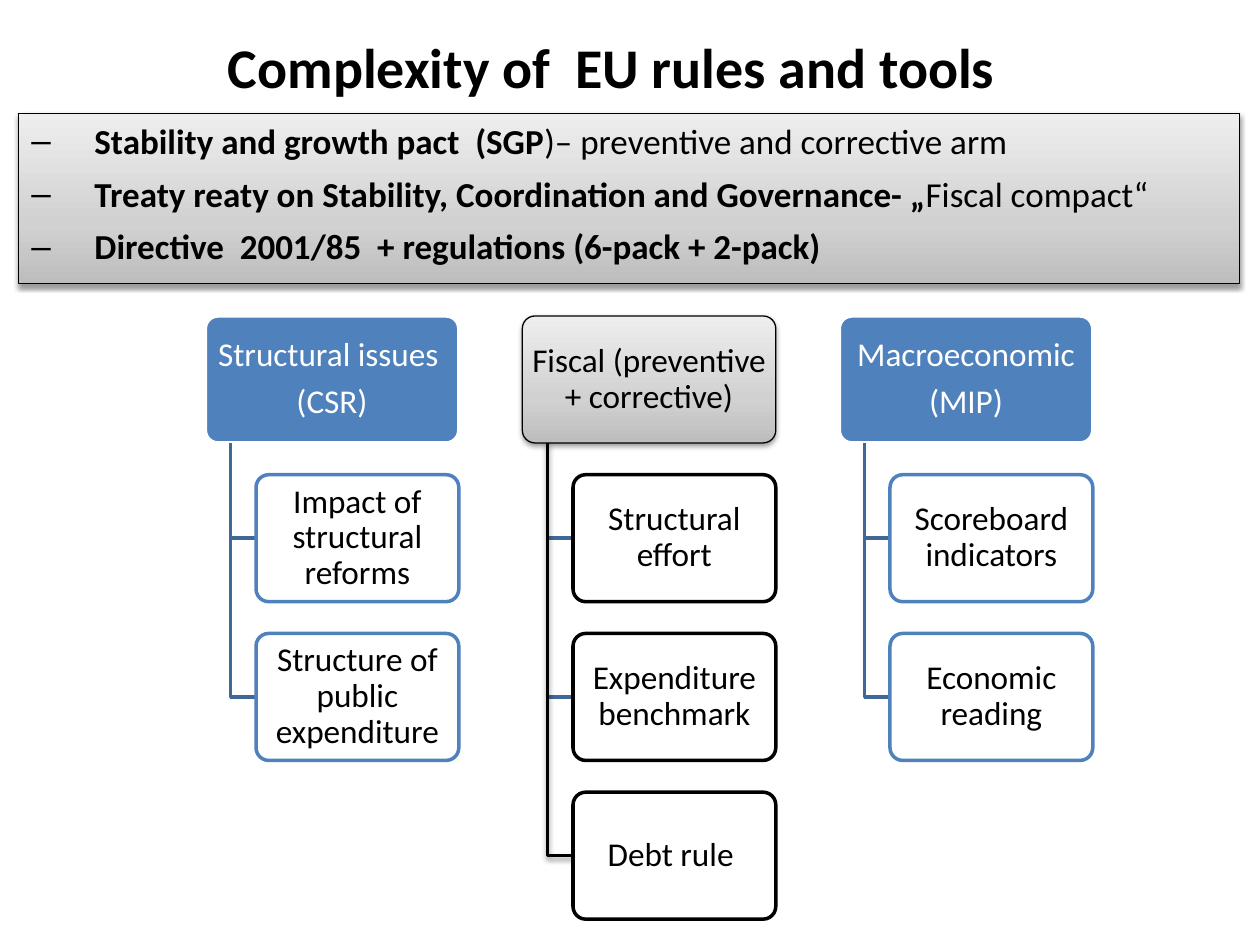
import copy

import pptx
import pptx.dml.color
import pptx.enum.shapes
import pptx.enum.text
import pptx.oxml
import pptx.oxml.ns
import pptx.util

Cm = pptx.util.Cm
Pt = pptx.util.Pt
BLUE, STEEL, BLACK, WHITE = "4F81BD", "3F6797", "000000", "FFFFFF"
GREY = ((0, "BDBDBD"), (0.35, "D1D1D1"), (1, "EEEEEE"))
RULES = (
    ("Stability and growth pact  (SGP", ")– preventive and corrective arm"),
    ("Treaty reaty on Stability, Coordination and Governance- „", "Fiscal compact“"),
    ("Directive  2001/85  + regulations (6-pack + 2-pack)", ""),
)
TREES = (
    (("Structural issues ", "(CSR)"), False,
     (("Impact of structural reforms", STEEL), ("Structure of public expenditure", STEEL))),
    (("Fiscal (preventive + corrective)",), True,
     (("Structural effort", STEEL), ("Expenditure benchmark", STEEL), ("Debt rule ", BLACK))),
    (("Macroeconomic", "(MIP)"), False,
     (("Scoreboard indicators", STEEL), ("Economic reading", STEEL))),
)


def tint(code):
    """Return the colour for a hex string."""
    return pptx.dml.color.RGBColor.from_string(code)


def place(shape, left, top, width, height):
    """Move and size a shape."""
    shape.left, shape.top, shape.width, shape.height = left, top, width, height


def set_line(shape, code, width):
    """Set the colour and width of an outline."""
    shape.line.color.rgb = tint(code)
    shape.line.width = Pt(width)


def set_font(font, size, code, bold=False):
    """Set the font of a paragraph."""
    font.name, font.size, font.bold = "Calibri", Pt(size), bold
    font.color.rgb = tint(code)


def add_shade(shape):
    """Give a shape a soft shadow below it."""
    shape.shadow.inherit = False
    shade = pptx.oxml.parse_xml(
        f'<a:outerShdw {pptx.oxml.ns.nsdecls("a")} blurRad="40000" dist="20000" '
        'dir="5400000" rotWithShape="0"><a:srgbClr val="000000">'
        '<a:alpha val="38000"/></a:srgbClr></a:outerShdw>')
    shape._element.spPr.find(pptx.oxml.ns.qn("a:effectLst")).append(shade)


def paint_grey(shape):
    """Give a shape the grey blend, black outline and shadow."""
    shape.fill.gradient()
    shape.fill.gradient_angle = 90
    stops = shape._element.spPr.find(".//" + pptx.oxml.ns.qn("a:gsLst"))
    stops.append(copy.deepcopy(stops[0]))
    for stop, (place_at, code) in zip(shape.fill.gradient_stops, GREY):
        stop.position = place_at
        stop.color.rgb = tint(code)
    set_line(shape, BLACK, 0.75)
    add_shade(shape)


def add_title(slide, left, top, width, height):
    """Fill the title."""
    title = slide.shapes.title
    place(title, left, top, width, height)
    frame = title.text_frame
    frame.text = "Complexity of  EU rules and tools  "
    frame.auto_size = pptx.enum.text.MSO_AUTO_SIZE.NONE
    frame.vertical_anchor = pptx.enum.text.MSO_ANCHOR.MIDDLE
    para = frame.paragraphs[0]
    para.alignment = pptx.enum.text.PP_ALIGN.CENTER
    set_font(para.font, 32, BLACK, True)


def add_rules(slide, left, top, width, height):
    """Fill the grey list of rules."""
    body = slide.placeholders[1]
    place(body, left, top, width, height)
    paint_grey(body)
    frame = body.text_frame
    frame.auto_size = pptx.enum.text.MSO_AUTO_SIZE.NONE
    for index, (strong, plain) in enumerate(RULES):
        para = frame.add_paragraph() if index else frame.paragraphs[0]
        para.level = 1
        para.space_before = Pt(6)
        props = para._p.get_or_add_pPr()
        props.set("marL", str(Cm(1.27)))
        props.set("indent", str(-Cm(1.27)))
        set_font(para.font, 20, BLACK)
        for text, bold in ((strong, True), (plain, False)):
            if text:
                run = para.add_run()
                run.text = text
                run.font.bold = bold


def add_box(slide, lines, code, left, top, width, height):
    """Add a rounded box with centred text."""
    box = slide.shapes.add_shape(
        pptx.enum.shapes.MSO_SHAPE.ROUNDED_RECTANGLE, left, top, width, height)
    box.adjustments[0] = 0.1
    box.shadow.inherit = False
    frame = box.text_frame
    frame.word_wrap = True
    frame.vertical_anchor = pptx.enum.text.MSO_ANCHOR.MIDDLE
    frame.margin_left = frame.margin_right = Cm(0.09)
    frame.margin_top = frame.margin_bottom = Cm(0.08)
    for index, text in enumerate(lines):
        para = frame.add_paragraph() if index else frame.paragraphs[0]
        para.text = text
        para.alignment = pptx.enum.text.PP_ALIGN.CENTER
        para.line_spacing = 0.9
        para.space_before = Pt(6 if index else 0)
        set_font(para.font, 19, code)
    return box


def add_wire(slide, code, left, top, right, bottom):
    """Add an elbow that runs down and then right."""
    pen = slide.shapes.build_freeform(left, top)
    pen.add_line_segments([(left, bottom), (right, bottom)], close=False)
    wire = pen.convert_to_shape()
    wire.fill.background()
    set_line(wire, code, 2)
    if code == BLACK:
        add_shade(wire)
    else:
        wire.shadow.inherit = False


def add_tree(slide, lines, grey, leaves, left, top, width, height):
    """Add a head box with its leaves hung below."""
    head = add_box(slide, lines, BLACK if grey else WHITE, left, top, width, height)
    if grey:
        paint_grey(head)
    else:
        head.fill.solid()
        head.fill.fore_color.rgb = tint(BLUE)
        set_line(head, WHITE, 2)
    trunk, edge = left + width // 10, left + width // 5
    for index, (text, code) in enumerate(leaves, 1):
        y = top + index * height * 5 // 4
        add_wire(slide, code, trunk, top + height, edge, y + height // 2)
        leaf = add_box(slide, [text], BLACK, edge, y, width * 4 // 5, height)
        leaf.fill.solid()
        leaf.fill.fore_color.rgb = tint(WHITE)
        set_line(leaf, BLACK if grey else BLUE, 2)


def main():
    """Build the slide and save it."""
    deck = pptx.Presentation()
    deck.slide_width, deck.slide_height = Cm(25.4), Cm(19.05)
    slide = deck.slides.add_slide(deck.slide_layouts[1])
    add_title(slide, Cm(0.28), Cm(0.33), Cm(24.61), Cm(2))
    add_rules(slide, Cm(0.38), Cm(2.29), Cm(24.61), Cm(3.43))
    for index, (lines, grey, leaves) in enumerate(TREES):
        add_tree(slide, lines, grey, leaves,
                 Cm(4.14 + 6.39 * index), Cm(6.37), Cm(5.11), Cm(2.56))
    deck.save("out.pptx")


if __name__ == "__main__":
    main()
